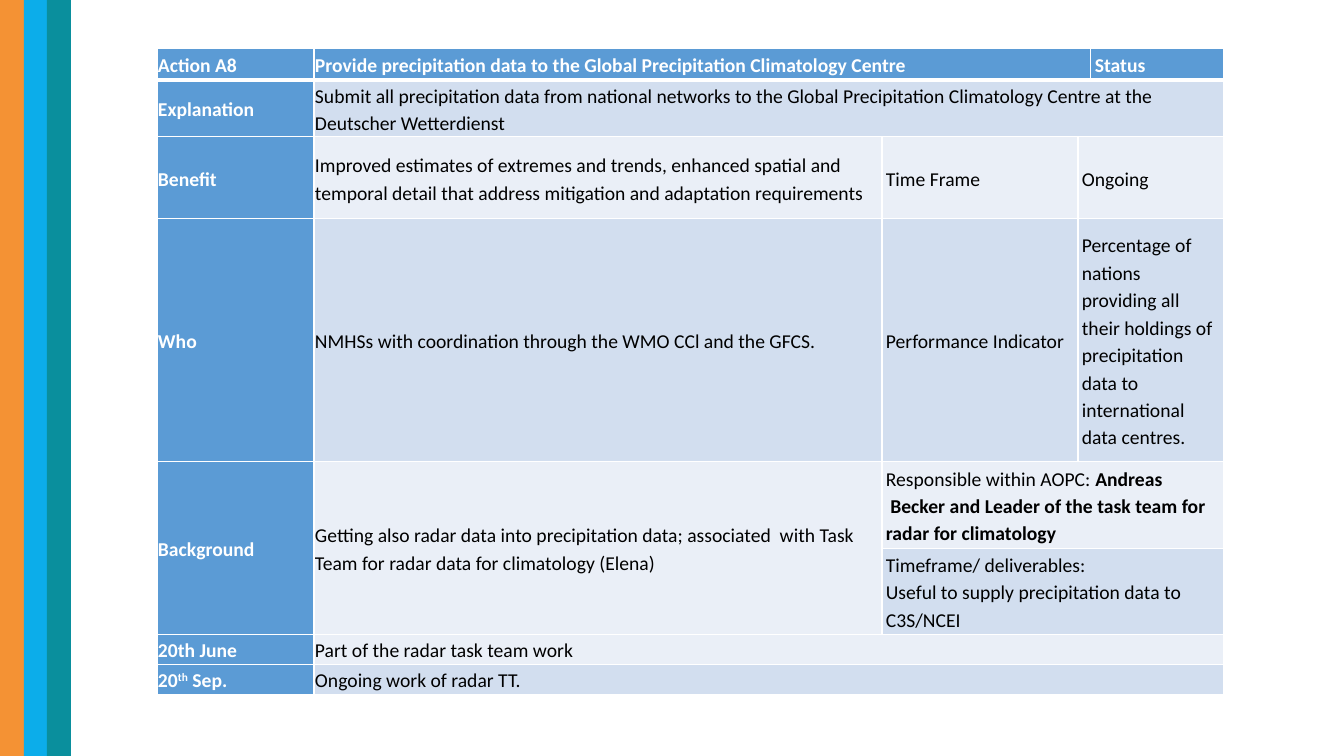
"""Build the Action A8 slide: one status table beside three colour bands."""
import pptx
import pptx.dml.color
import pptx.enum.shapes
import pptx.enum.text
import pptx.oxml
import pptx.oxml.ns
import pptx.util

COLORS = {
    "orange": "F49234", "sky": "0CADEA", "teal": "0A8F9D",
    "heading": "5B9BD5", "odd row": "D2DEEF", "even row": "EAEFF7",
    "white": "FFFFFF", "black": "000000",
}
BANDS = [("orange", 0, 24), ("sky", 24, 23), ("teal", 47, 24)]
SLIDE_WIDTH, SLIDE_HEIGHT = 1344, 756
TABLE_LEFT, TABLE_TOP = 157, 48
COLUMN_WIDTHS = [157, 568, 196, 13, 133]
ROW_HEIGHTS = [32, 56, 82, 243, 86, 86, 30, 30]
EMU_PER_PX = 914400 / 100.8

# Each entry: row, column, row span, column span, paragraphs of (text, style).
ENTRIES = [
    (0, 0, 1, 1, [[("Action A8", "bold")]]),
    (0, 1, 1, 3, [[("Provide precipitation data to the Global Precipitation Climatology Centre", "bold")]]),
    (0, 4, 1, 1, [[("Status", "bold")]]),
    (1, 0, 1, 1, [[("Explanation", "bold")]]),
    (1, 1, 1, 4, [[("Submit all precipitation data from national networks to the Global "
                    "Precipitation Climatology Centre at the Deutscher Wetterdienst", "")]]),
    (2, 0, 1, 1, [[("Benefit", "bold")]]),
    (2, 1, 1, 1, [[("Improved estimates of extremes and trends, enhanced spatial and temporal "
                    "detail that address mitigation and adaptation requirements", "")]]),
    (2, 2, 1, 1, [[("Time Frame", "")]]),
    (2, 3, 1, 2, [[("Ongoing", "")]]),
    (3, 0, 1, 1, [[("Who", "bold")]]),
    (3, 1, 1, 1, [[("NMHSs with coordination through the WMO CCl and the GFCS.", "")]]),
    (3, 2, 1, 1, [[("Performance Indicator", "")]]),
    (3, 3, 1, 2, [[("Percentage of nations providing all their holdings of precipitation "
                    "data to international data centres.", "")]]),
    (4, 0, 2, 1, [[("Background", "bold")]]),
    (4, 1, 2, 1, [[("Getting also radar data into precipitation data; associated  with Task "
                    "Team for radar data for climatology (Elena)", "")]]),
    (4, 2, 1, 3, [[("Responsible within AOPC: ", ""), ("Andreas", "bold")],
                  [(" Becker and Leader of the task team for radar for climatology", "bold")]]),
    (5, 2, 1, 3, [[("Timeframe/ deliverables:", "")],
                  [("Useful to supply precipitation data to C3S/NCEI", "")]]),
    (6, 0, 1, 1, [[("20th June", "bold")]]),
    (6, 1, 1, 4, [[("Part of the radar task team work", "")]]),
    (7, 0, 1, 1, [[("20", "bold"), ("th", "bold superscript"), (" Sep.", "bold")]]),
    (7, 1, 1, 4, [[("Ongoing work of radar TT.", "")]]),
]


def px(length):
    return pptx.util.Emu(round(length * EMU_PER_PX))


def rgb(name):
    return pptx.dml.color.RGBColor.from_string(COLORS[name])


def add_bands(slide):
    for color, left, width in BANDS:
        band = slide.shapes.add_shape(
            pptx.enum.shapes.MSO_SHAPE.RECTANGLE, px(left), 0, px(width), px(SLIDE_HEIGHT))
        band.shadow.inherit = False
        band.fill.solid()
        band.fill.fore_color.rgb = rgb(color)
        band.line.fill.background()


def draw_borders(cell, row):
    widths = {"L": 1, "R": 1, "T": 3 if row == 1 else 1, "B": 3 if row == 0 else 1}
    for side, points in widths.items():
        cell._tc.get_or_add_tcPr().append(pptx.oxml.parse_xml(
            f'<a:ln{side} {pptx.oxml.ns.nsdecls("a")} w="{pptx.util.Pt(points)}">'
            f'<a:solidFill><a:srgbClr val="{COLORS["white"]}"/></a:solidFill></a:ln{side}>'))


def format_cell(cell, row, column):
    draw_borders(cell, row)
    heading = row == 0 or column == 0
    cell.fill.solid()
    cell.fill.fore_color.rgb = rgb("heading" if heading else "odd row" if row % 2 else "even row")
    cell.vertical_anchor = pptx.enum.text.MSO_ANCHOR.MIDDLE
    wide = (column == 4) if row == 0 else column >= 2
    cell.margin_left = cell.margin_right = px(4 if wide else 1)
    cell.margin_top = cell.margin_bottom = px(2 if wide else 1)


def write_cell(cell, paragraphs, color):
    for index, pieces in enumerate(paragraphs):
        frame = cell.text_frame
        paragraph = frame.add_paragraph() if index else frame.paragraphs[0]
        paragraph.line_spacing = 1.15
        for text, style in pieces:
            run = paragraph.add_run()
            run.text = text
            run.font.name = "Calibri"
            run.font.size = pptx.util.Pt(14)
            run.font.bold = "bold" in style
            run.font.color.rgb = rgb(color)
            if "superscript" in style:
                run._r.get_or_add_rPr().set("baseline", "30000")


def add_action_table(slide):
    action = slide.shapes.add_table(
        len(ROW_HEIGHTS), len(COLUMN_WIDTHS), px(TABLE_LEFT), px(TABLE_TOP),
        px(sum(COLUMN_WIDTHS)), px(sum(ROW_HEIGHTS))).table
    for column, width in zip(action.columns, COLUMN_WIDTHS):
        column.width = px(width)
    for row, height in zip(action.rows, ROW_HEIGHTS):
        row.height = px(height)
    for row in range(len(ROW_HEIGHTS)):
        for column in range(len(COLUMN_WIDTHS)):
            format_cell(action.cell(row, column), row, column)
    for row, column, row_span, column_span, paragraphs in ENTRIES:
        cell = action.cell(row, column)
        if row_span * column_span > 1:
            cell.merge(action.cell(row + row_span - 1, column + column_span - 1))
        write_cell(cell, paragraphs, "white" if row == 0 or column == 0 else "black")


def main():
    deck = pptx.Presentation()
    deck.slide_width, deck.slide_height = px(SLIDE_WIDTH), px(SLIDE_HEIGHT)
    slide = deck.slides.add_slide(deck.slide_layouts[6])
    add_bands(slide)
    add_action_table(slide)
    deck.save("out.pptx")


if __name__ == "__main__":
    main()
